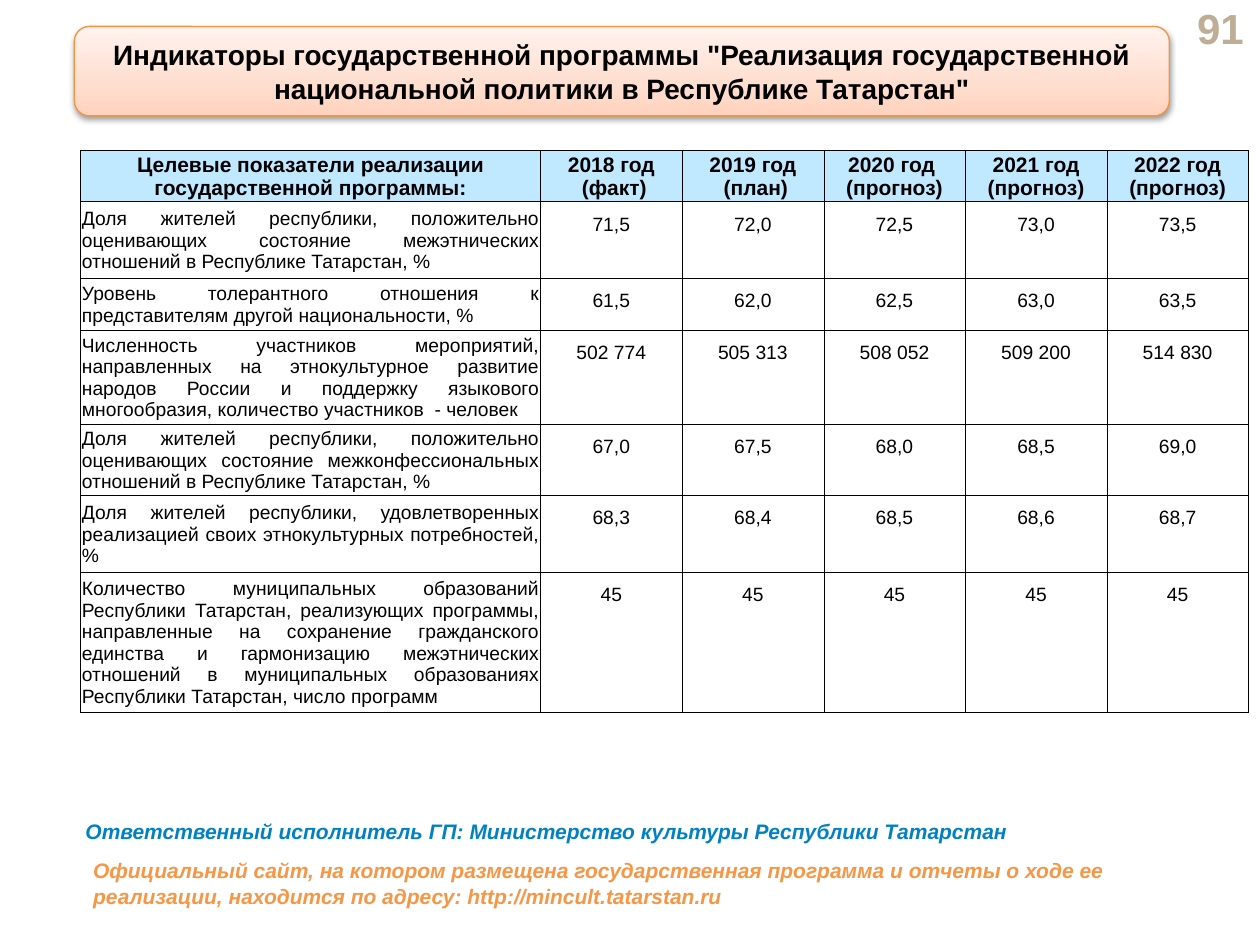
from copy import deepcopy
from dataclasses import dataclass

from lxml import etree
from pptx import Presentation
from pptx.dml.color import RGBColor
from pptx.enum import shapes, text
from pptx.oxml import ns, parse_xml
from pptx.util import Inches, Pt

ALIGN = text.PP_ALIGN
ANCHOR = text.MSO_ANCHOR


@dataclass(frozen=True)
class Theme:
    font: str = "Arial"
    ink: str = "000000"
    page: str = "BFAE96"
    banner_line: str = "F69240"
    banner_stops: tuple = ((0, "FFD2BD"), (0.35, "FFDED0"), (1, "FFF2ED"))
    header: str = "C0E9FF"
    executor: str = "0081C5"
    website: str = "F79646"
    page_size: int = 24
    title_size: int = 16
    strong_size: int = 12
    body_size: int = 11
    border: float = 0.25


THEME = Theme()
TITLE = ('Индикаторы государственной программы "Реализация государственной '
         'национальной политики в Республике Татарстан"')
HEADINGS = [
    "Целевые показатели реализации государственной программы:",
    "2018 год\n (факт)", "2019 год\n (план)", "2020 год \n(прогноз)",
    "2021 год\n(прогноз)", "2022 год\n(прогноз)",
]
INDICATORS = [
    ("Доля жителей республики, положительно оценивающих состояние "
     "межэтнических отношений в Республике Татарстан, %",
     ["71,5", "72,0", "72,5", "73,0", "73,5"]),
    ("Уровень толерантного отношения к представителям другой национальности, %",
     ["61,5", "62,0", "62,5", "63,0", "63,5"]),
    ("Численность участников мероприятий, направленных на этнокультурное "
     "развитие народов России и поддержку языкового многообразия, "
     "количество участников  - человек",
     ["502 774", "505 313", "508 052", "509 200", "514 830"]),
    ("Доля жителей республики, положительно оценивающих состояние "
     "межконфессиональных отношений в Республике Татарстан, %",
     ["67,0", "67,5", "68,0", "68,5", "69,0"]),
    ("Доля жителей республики, удовлетворенных реализацией своих "
     "этнокультурных потребностей, %",
     ["68,3", "68,4", "68,5", "68,6", "68,7"]),
    ("Количество муниципальных образований Республики Татарстан, реализующих "
     "программы, направленные на сохранение гражданского единства и "
     "гармонизацию межэтнических отношений в муниципальных образованиях "
     "Республики Татарстан, число программ",
     ["45"] * 5),
]
ROW_HEIGHTS = [0.41, 0.61, 0.41, 0.75, 0.56, 0.61, 1.11]
LABEL_WIDTH = 3.65
LABEL_INSETS = (0.01, 0.01, 0.01, 0)
VALUE_INSETS = (0.04, 0.07, 0.04, 0.07)
EXECUTOR = "Ответственный исполнитель ГП: Министерство культуры Республики Татарстан"
WEBSITE = ("Официальный сайт, на котором размещена государственная программа и отчеты "
           "о ходе ее реализации, находится по адресу: http://mincult.tatarstan.ru")


def inches(box):
    return [Inches(length) for length in box]


def write(frame, content, size, color=THEME.ink, bold=True, italic=False,
          align=ALIGN.LEFT, spacing=None):
    frame.word_wrap = True
    frame.text = content
    for paragraph in frame.paragraphs:
        paragraph.alignment = align
        if spacing:
            paragraph.line_spacing = spacing
        font = paragraph.font
        font.name, font.size = THEME.font, Pt(size)
        font.bold, font.italic = bold, italic
        font.color.rgb = RGBColor.from_string(color)


def add_banner(slide, box):
    title = slide.shapes.title
    panel = slide.shapes.add_shape(shapes.MSO_SHAPE.ROUNDED_RECTANGLE, *inches(box))
    title._element.addprevious(panel._element)
    panel.line.color.rgb = RGBColor.from_string(THEME.banner_line)
    panel.line.width = Pt(0.75)

    panel.fill.gradient()
    panel.fill.gradient_angle = 90
    stop_list = panel._element.spPr.find(".//" + ns.qn("a:gsLst"))
    stop_list.append(deepcopy(stop_list[0]))
    for stop, (position, color) in zip(panel.fill.gradient_stops, THEME.banner_stops):
        stop.position = position
        stop.color.rgb = RGBColor.from_string(color)

    panel.shadow.inherit = False
    effects = panel._element.spPr.find(ns.qn("a:effectLst"))
    effects.append(parse_xml(
        f'<a:outerShdw {ns.nsdecls("a")} blurRad="{Pt(3.1)}" dist="{Pt(1.6)}" '
        f'dir="5400000" rotWithShape="0"><a:srgbClr val="{THEME.ink}">'
        '<a:alpha val="38000"/></a:srgbClr></a:outerShdw>'))

    title.left, title.top, title.width, title.height = inches(box)
    title.text_frame.vertical_anchor = ANCHOR.MIDDLE
    write(title.text_frame, TITLE, THEME.title_size, align=ALIGN.CENTER)


def add_borders(cell):
    properties = cell._tc.get_or_add_tcPr()
    for position, side in enumerate(("lnL", "lnR", "lnT", "lnB")):
        line = etree.Element(ns.qn(f"a:{side}"), w=str(Pt(THEME.border)))
        fill = etree.SubElement(line, ns.qn("a:solidFill"))
        etree.SubElement(fill, ns.qn("a:srgbClr"), val=THEME.ink)
        properties.insert(position, line)


def format_cell(cell, content, insets, anchor, fill=None, **style):
    (cell.margin_left, cell.margin_top,
     cell.margin_right, cell.margin_bottom) = inches(insets)
    cell.vertical_anchor = anchor
    write(cell.text_frame, content, **style)
    if fill:
        cell.fill.solid()
        cell.fill.fore_color.rgb = RGBColor.from_string(fill)
    else:
        cell.fill.background()
    add_borders(cell)


def add_indicators(slide, box):
    rows, columns = len(INDICATORS) + 1, len(HEADINGS)
    table = slide.shapes.add_table(rows, columns, *inches(box)).table
    year_width = (box[2] - LABEL_WIDTH) / (columns - 1)
    for index, column in enumerate(table.columns):
        column.width = Inches(year_width if index else LABEL_WIDTH)
    for row, height in zip(table.rows, ROW_HEIGHTS):
        row.height = Inches(height)

    for index, heading in enumerate(HEADINGS):
        format_cell(table.cell(0, index), heading, LABEL_INSETS, ANCHOR.MIDDLE,
                    THEME.header, size=THEME.strong_size, align=ALIGN.CENTER)
    for row, (label, values) in enumerate(INDICATORS, 1):
        format_cell(table.cell(row, 0), label, LABEL_INSETS, ANCHOR.MIDDLE,
                    size=THEME.body_size, bold=False, align=ALIGN.JUSTIFY)
        for column, value in enumerate(values, 1):
            format_cell(table.cell(row, column), value, VALUE_INSETS, ANCHOR.TOP,
                        size=THEME.body_size, bold=False, align=ALIGN.CENTER,
                        spacing=1.15)


def add_note(slide, box, content, size, color, anchor=ANCHOR.TOP, **style):
    frame = slide.shapes.add_textbox(*inches(box)).text_frame
    frame.vertical_anchor = anchor
    write(frame, content, size, color, **style)


def main():
    deck = Presentation()
    deck.slide_width, deck.slide_height = Inches(10), Inches(7.5)
    slide = deck.slides.add_slide(deck.slide_layouts[5])
    add_note(slide, (9.11, 0.05, 0.86, 0.34), "91", THEME.page_size, THEME.page,
             ANCHOR.MIDDLE, align=ALIGN.RIGHT)
    add_banner(slide, (0.59, 0.21, 8.69, 0.71))
    add_indicators(slide, (0.64, 1.19, 9.27, sum(ROW_HEIGHTS)))
    add_note(slide, (0.58, 6.45, 9.52, 0.3), EXECUTOR, THEME.strong_size,
             THEME.executor, italic=True)
    add_note(slide, (0.64, 6.76, 8.59, 0.43), WEBSITE, THEME.strong_size,
             THEME.website, italic=True)
    deck.save("out.pptx")


if __name__ == "__main__":
    main()
